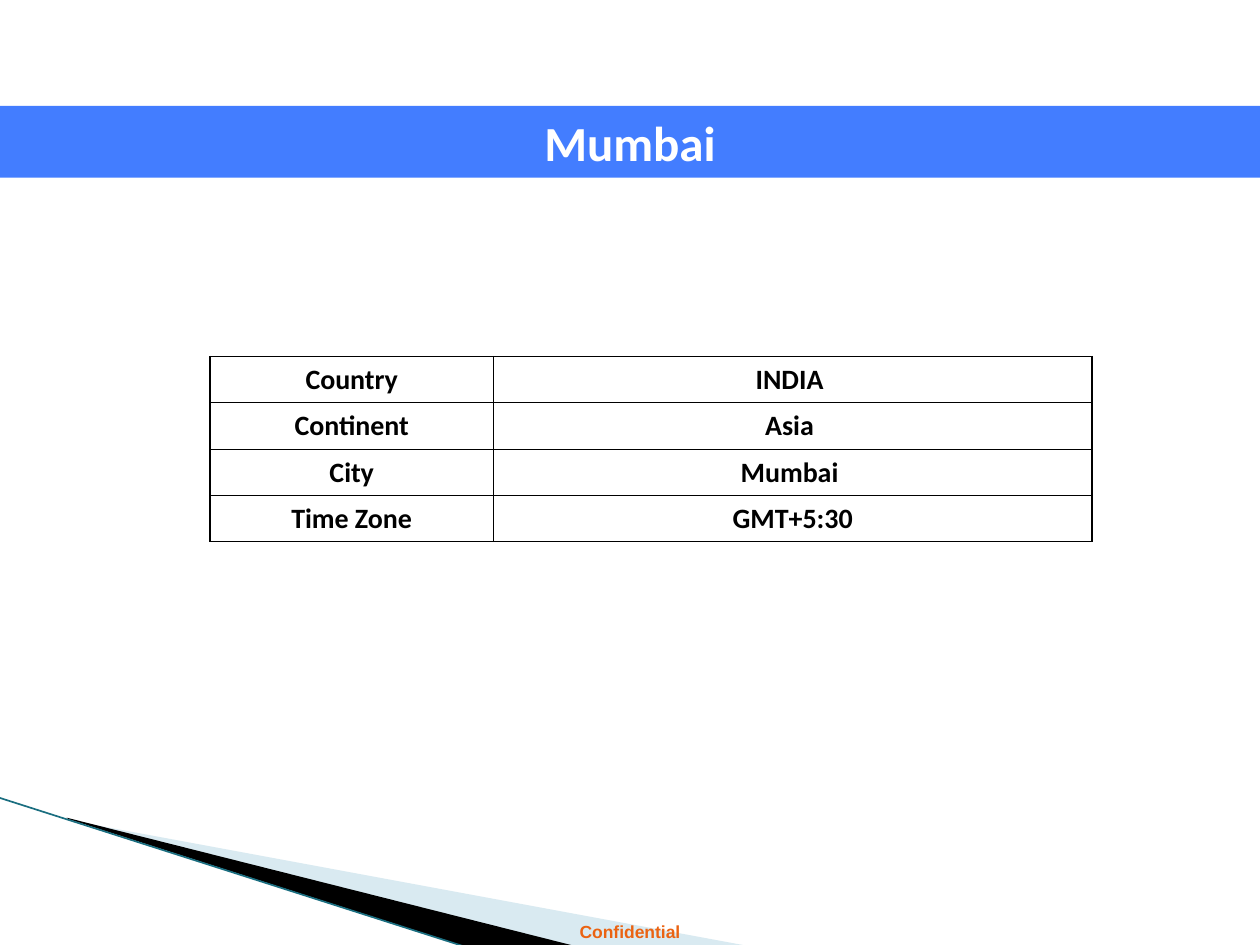
from lxml.etree import SubElement
from pptx import Presentation
from pptx.dml.color import RGBColor
from pptx.enum.shapes import MSO_CONNECTOR, MSO_SHAPE
from pptx.enum.text import MSO_ANCHOR, PP_ALIGN
from pptx.oxml.ns import qn
from pptx.util import Inches, Pt

COLORS = {"banner": "437DFF", "white": "FFFFFF", "black": "000000",
          "pale": "A0CBDC", "edge": "1A6E80", "notice": "EB6312"}

deck = Presentation()
deck.slide_width, deck.slide_height = Inches(10), Inches(7.5)
W, H = deck.slide_width, deck.slide_height
slide = deck.slides.add_slide(deck.slide_layouts[6])


def rgb(name):
    return RGBColor.from_string(COLORS[name])


def write(frame, text, size, font, color):
    paragraph = frame.paragraphs[0]
    paragraph.alignment = PP_ALIGN.CENTER
    run = paragraph.add_run()
    run.text = text
    run.font.size, run.font.name, run.font.bold = Pt(size), font, True
    run.font.color.rgb = rgb(color)


# Corner wedges, the pale one behind the black one
wedges = [
    ("pale", [(0.55, 6.51), (5.95, 7.51), (4.56, 7.51), (0.55, 6.5)]),
    ("black", [(0.53, 6.49), (4.57, 7.51), (3.72, 7.52), (0.54, 6.5)]),
]
for color, points in wedges:
    start, *rest = [(Inches(x), Inches(y)) for x, y in points]
    outline = slide.shapes.build_freeform(*start)
    outline.add_line_segments(rest, close=True)
    wedge = outline.convert_to_shape()
    wedge.shadow.inherit = False
    wedge.fill.solid()
    wedge.fill.fore_color.rgb = rgb(color)
    wedge.line.fill.background()
    if color == "pale":
        tint = wedge.fill._xPr.find(qn("a:solidFill"))[0]
        SubElement(tint, qn("a:alpha")).set("val", "40000")

# Thin edge along the wedges
edge = slide.shapes.add_connector(MSO_CONNECTOR.STRAIGHT, Inches(-0.01),
                                  Inches(6.33), Inches(3.71), Inches(7.52))
edge.line.color.rgb = rgb("edge")
edge.line.width = Pt(0.95)
SubElement(edge._element.spPr, qn("a:effectLst"))

# Confidentiality notice
notice = slide.shapes.add_textbox(0, Inches(7.26), W, Inches(0.27))
notice.text_frame.word_wrap = True
write(notice.text_frame, "Confidential", 10, "Arial", "notice")

# City banner
banner = slide.shapes.add_shape(MSO_SHAPE.RECTANGLE, 0, Inches(0.84), W, Inches(0.57))
banner.shadow.inherit = False
banner.fill.solid()
banner.fill.fore_color.rgb = rgb("banner")
banner.line.fill.background()
banner.text_frame.word_wrap = True
banner.text_frame.vertical_anchor = MSO_ANCHOR.MIDDLE
write(banner.text_frame, "Mumbai", 28, "Calibri", "white")

# City facts
facts = [("Country", "INDIA "), ("Continent", "Asia "),
         ("City", "Mumbai "), ("Time Zone", "GMT+5:30")]
last_row, last_col = len(facts) - 1, 1
table = slide.shapes.add_table(len(facts), 2, W // 6, Inches(2.83),
                               Inches(7), Inches(1.47)).table
table.first_row = table.horz_banding = False
table.columns[0].width, table.columns[1].width = Inches(2.25), Inches(4.75)
for r, fact in enumerate(facts):
    for c, text in enumerate(fact):
        cell = table.cell(r, c)
        cell.vertical_anchor = MSO_ANCHOR.MIDDLE
        write(cell.text_frame, text, 16, "Calibri", "black")
        # Outer borders are heavier than inner ones
        outer = {"lnL": c == 0, "lnR": c == last_col,
                 "lnT": r == 0, "lnB": r == last_row}
        properties = cell._tc.get_or_add_tcPr()
        for side, is_outer in outer.items():
            border = SubElement(properties, qn(f"a:{side}"))
            border.set("w", str(Pt(1 if is_outer else 0.5)))
            paint = SubElement(border, qn("a:solidFill"))
            SubElement(paint, qn("a:srgbClr")).set("val", COLORS["black"])
        cell.fill.background()

deck.save("out.pptx")
